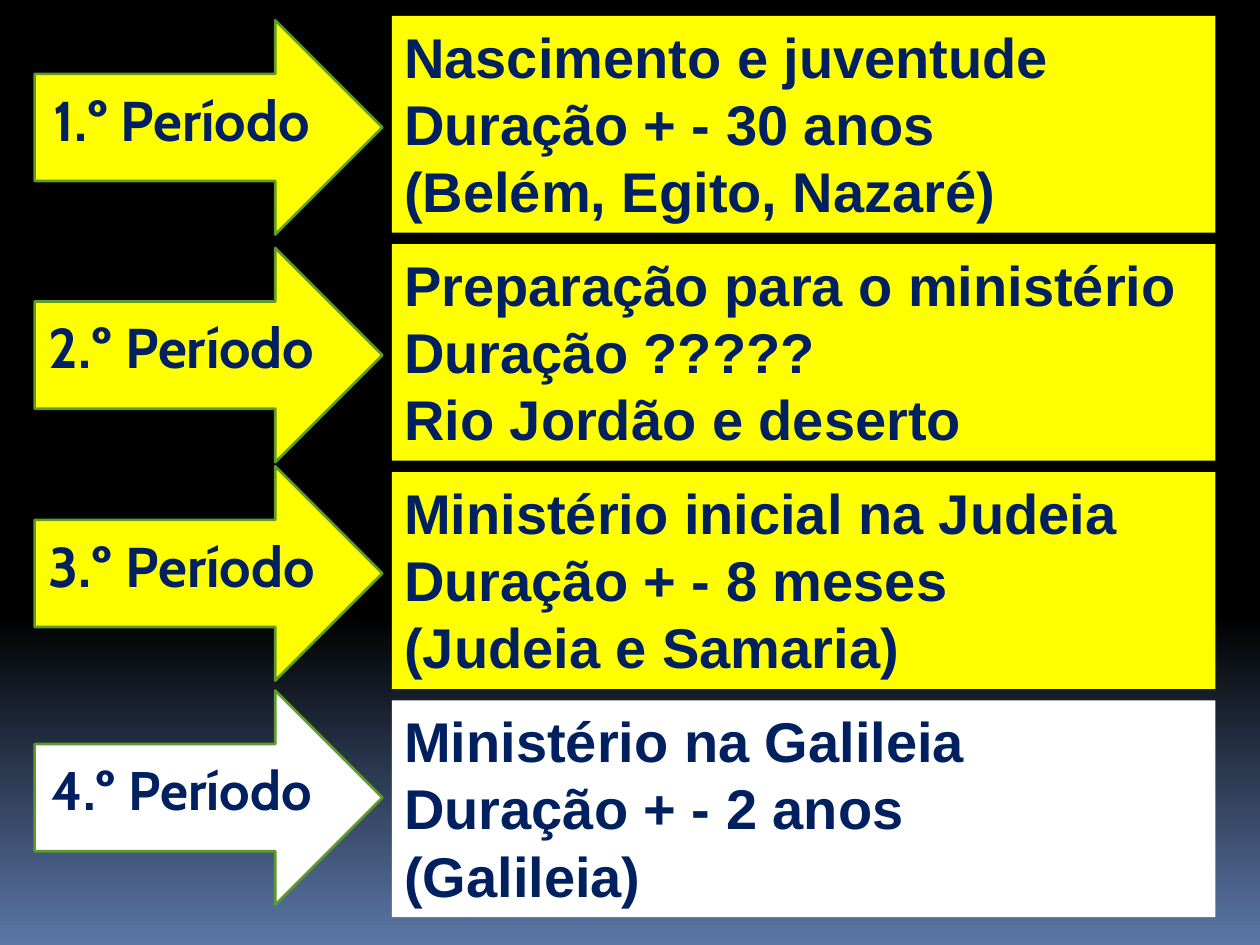
from dataclasses import dataclass

from pptx import Presentation
from pptx.dml.color import RGBColor
from pptx.enum.shapes import MSO_SHAPE
from pptx.enum.text import MSO_ANCHOR, PP_ALIGN
from pptx.util import Cm, Pt

RECTANGLE, RIGHT_ARROW = MSO_SHAPE.RECTANGLE, MSO_SHAPE.RIGHT_ARROW
TOP, MIDDLE = MSO_ANCHOR.TOP, MSO_ANCHOR.MIDDLE
LEFT, CENTER = PP_ALIGN.LEFT, PP_ALIGN.CENTER


@dataclass(frozen=True)
class Theme:
    navy: RGBColor = RGBColor(0x00, 0x20, 0x60)
    yellow: RGBColor = RGBColor(0xFF, 0xFF, 0x00)
    white: RGBColor = RGBColor(0xFF, 0xFF, 0xFF)
    green: RGBColor = RGBColor(0x5E, 0x9B, 0x2C)
    black: RGBColor = RGBColor(0x00, 0x00, 0x00)
    blue: RGBColor = RGBColor(0x5B, 0x77, 0xA8)
    text_size: int = 32
    last_period_size: int = 31
    outline: float = 1.5


theme = Theme()


def write(frame, text, *, font, size, align=LEFT, anchor=TOP, hanging=0):
    frame.word_wrap = True
    frame.vertical_anchor = anchor
    frame.text = text
    for paragraph in frame.paragraphs:
        paragraph.alignment = align
        if hanging:
            properties = paragraph._p.get_or_add_pPr()
            properties.set("marL", str(hanging))
            properties.set("indent", str(-hanging))
        paragraph.font.name = font
        paragraph.font.size = Pt(size)
        paragraph.font.bold = True
        paragraph.font.color.rgb = theme.navy


def add_filled(kind, left, top, width, height, color):
    shape = slide.shapes.add_shape(kind, Cm(left), Cm(top), Cm(width), Cm(height))
    shape.shadow.inherit = False
    shape.fill.solid()
    shape.fill.fore_color.rgb = color
    shape.line.fill.background()
    return shape


periods = [
    ("1.º Período", 0.41, theme.yellow, theme.text_size,
     "Nascimento e juventude\nDuração + - 30 anos\n(Belém, Egito, Nazaré)"),
    ("2.º Período", 5.0, theme.yellow, theme.text_size,
     "Preparação para o ministério\nDuração ?????\nRio Jordão e deserto"),
    ("3.º Período", 9.4, theme.yellow, theme.text_size,
     "Ministério inicial na Judeia\nDuração + - 8 meses\n(Judeia e Samaria)"),
    ("4.º Período", 13.92, theme.white, theme.last_period_size,
     "Ministério na Galileia\nDuração + - 2 anos\n(Galileia)"),
]

presentation = Presentation()
presentation.slide_width, presentation.slide_height = Cm(25.4), Cm(19.05)
slide = presentation.slides.add_slide(presentation.slide_layouts[6])

sky = slide.background.fill
sky.gradient()
sky.gradient_angle = 270
for stop, position, color in zip(sky.gradient_stops, (0.65, 1), (theme.black, theme.blue)):
    stop.position = position
    stop.color.rgb = color

for row, (_, _, color, _, description) in enumerate(periods):
    panel = add_filled(RECTANGLE, 7.9, 0.32 + 4.6 * row, 16.6, 4.37, color)
    write(panel.text_frame, description, font="Arial", size=theme.text_size, hanging=Cm(2.54))

for period, top, color, size, _ in periods:
    arrow = add_filled(RIGHT_ARROW, 0.7, top, 7.01, 4.32, color)
    arrow.line.color.rgb = theme.green
    arrow.line.width = Pt(theme.outline)
    arrow.text_frame.margin_bottom = Cm(0.47)
    write(arrow.text_frame, period, font="Cabin", size=size, align=CENTER, anchor=MIDDLE)

presentation.save("out.pptx")
